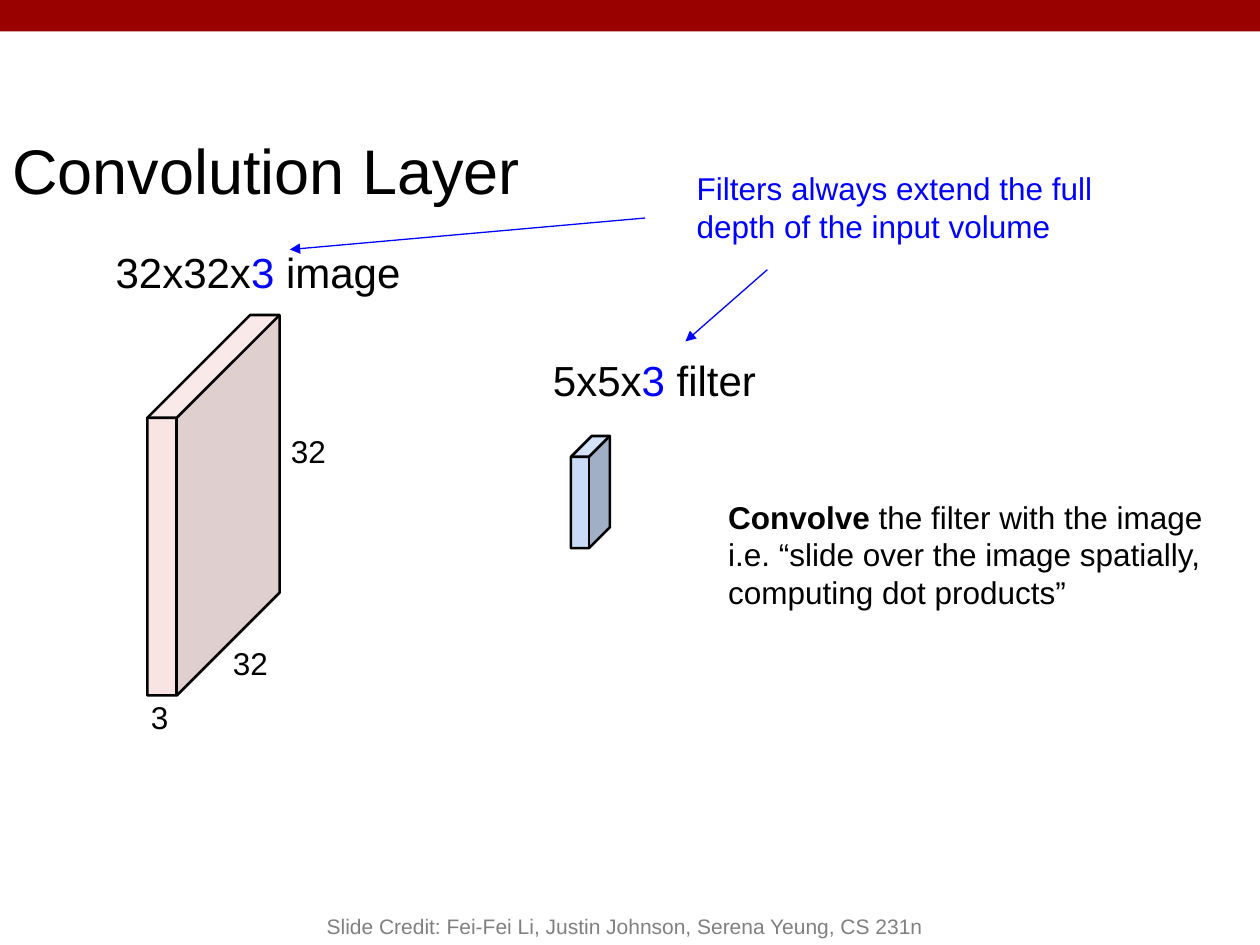
from pptx import Presentation
from pptx.dml.color import RGBColor
from pptx.enum.shapes import MSO_CONNECTOR, MSO_SHAPE
from pptx.enum.text import MSO_ANCHOR, PP_ALIGN
from pptx.oxml.ns import qn
from pptx.util import Pt
from lxml import etree

RECT, CUBE = MSO_SHAPE.RECTANGLE, MSO_SHAPE.CUBE
LINE = MSO_CONNECTOR.STRAIGHT
TOP, BOTTOM = MSO_ANCHOR.TOP, MSO_ANCHOR.BOTTOM
LEFT, CENTER = PP_ALIGN.LEFT, PP_ALIGN.CENTER

RED = RGBColor(0x99, 0x00, 0x00)
PINK = RGBColor(0xF4, 0xCC, 0xCC)
SKY = RGBColor(0xC9, 0xDA, 0xF8)
BLUE = RGBColor(0x00, 0x00, 0xFF)
BLACK = RGBColor(0x00, 0x00, 0x00)
GRAY = RGBColor(0x80, 0x80, 0x80)


def apply(target, values):
    """Set each named attribute of the target."""
    for name, value in values.items():
        setattr(target, name, value)


def add_solid(slide, kind, box, color):
    """Add a filled preset shape without line or shadow."""
    shape = slide.shapes.add_shape(kind, *map(Pt, box))
    shape.shadow.inherit = False
    shape.fill.solid()
    shape.fill.fore_color.rgb = color
    shape.line.fill.background()
    return shape


def add_cube(slide, box, color, depth, alpha=100):
    """Add an outlined cube with a given depth and opacity in percent."""
    cube = add_solid(slide, CUBE, box, color)
    cube.adjustments[0] = depth
    cube.line.color.rgb = BLACK
    cube.line.width = Pt(1.5)
    if alpha < 100:
        tint = cube._element.spPr.find(qn("a:solidFill")).find(qn("a:srgbClr"))
        etree.SubElement(tint, qn("a:alpha"), val=str(alpha * 1000))


def add_text(slide, box, size, *lines, anchor=TOP, align=LEFT, pad=7.2):
    """Add a text box whose lines are lists of (text, color, bold) runs."""
    frame = slide.shapes.add_textbox(*map(Pt, box)).text_frame
    apply(frame, {
        "word_wrap": True, "vertical_anchor": anchor,
        "margin_left": Pt(7.2), "margin_right": Pt(7.2),
        "margin_top": Pt(pad), "margin_bottom": Pt(pad),
    })
    for i, line in enumerate(lines):
        para = frame.add_paragraph() if i else frame.paragraphs[0]
        para.alignment = align
        for text, color, bold in line:
            run = para.add_run()
            run.text = text
            apply(run.font, {"name": "Arial", "size": Pt(size), "bold": bold})
            run.font.color.rgb = color


def add_arrow(slide, start, end):
    """Add a thin blue arrow that points at its end."""
    arrow = slide.shapes.add_connector(LINE, *map(Pt, start + end))
    arrow.line.color.rgb = BLUE
    arrow.line.width = Pt(0.75)
    etree.SubElement(arrow.line._get_or_add_ln(), qn("a:tailEnd"), type="triangle")
    etree.SubElement(arrow._element.spPr, qn("a:effectLst"))


def add_size(slide, box, sides, noun):
    """Add a size label with its depth of 3 in blue."""
    add_text(slide, box, 24, [
        (sides, BLACK, False), ("3", BLUE, False), (noun, BLACK, False),
    ])


def main():
    """Build the convolution layer slide."""
    deck = Presentation()
    deck.slide_width, deck.slide_height = Pt(720), Pt(540)
    slide = deck.slides.add_slide(deck.slide_layouts[6])

    add_solid(slide, RECT, (0, 0, 720, 18), RED)
    add_text(slide, (0, 67.7, 606, 52), 36, [("Convolution Layer", BLACK, False)])

    add_cube(slide, (84.2, 180, 75.6, 217.4), PINK, 0.777, 52)
    for text, left, top in (("32", 126, 360.7), ("32", 159.1, 239.8), ("3", 79.2, 391.7)):
        add_text(slide, (left, top, 39, 24), 18, [(text, BLACK, False)])
    add_size(slide, (59, 133.9, 263.5, 37.4), "32x32x", " image")

    add_cube(slide, (326.2, 249.1, 22.3, 64.1), SKY, 0.534)
    add_size(slide, (308.9, 195.1, 166.3, 28), "5x5x", " filter")

    add_text(
        slide, (409, 277.2, 311, 59.8), 18,
        [("Convolve ", BLACK, True), ("the filter with the image", BLACK, False)],
        [("i.e. “slide over the image spatially, computing dot products”", BLACK, False)],
    )
    add_text(slide, (391, 89.3, 258.5, 46), 18, [
        ("Filters always extend the full depth of the input volume", BLUE, False),
    ])
    add_arrow(slide, (438.5, 154.1), (391.7, 195.1))
    add_arrow(slide, (368.6, 124.6), (165.6, 142.6))

    add_text(
        slide, (144, 504, 426.2, 36), 12,
        [("Slide Credit: Fei-Fei Li, Justin Johnson, Serena Yeung, CS 231n", GRAY, False)],
        anchor=BOTTOM, align=CENTER, pad=3.6,
    )
    deck.save("out.pptx")


if __name__ == "__main__":
    main()
